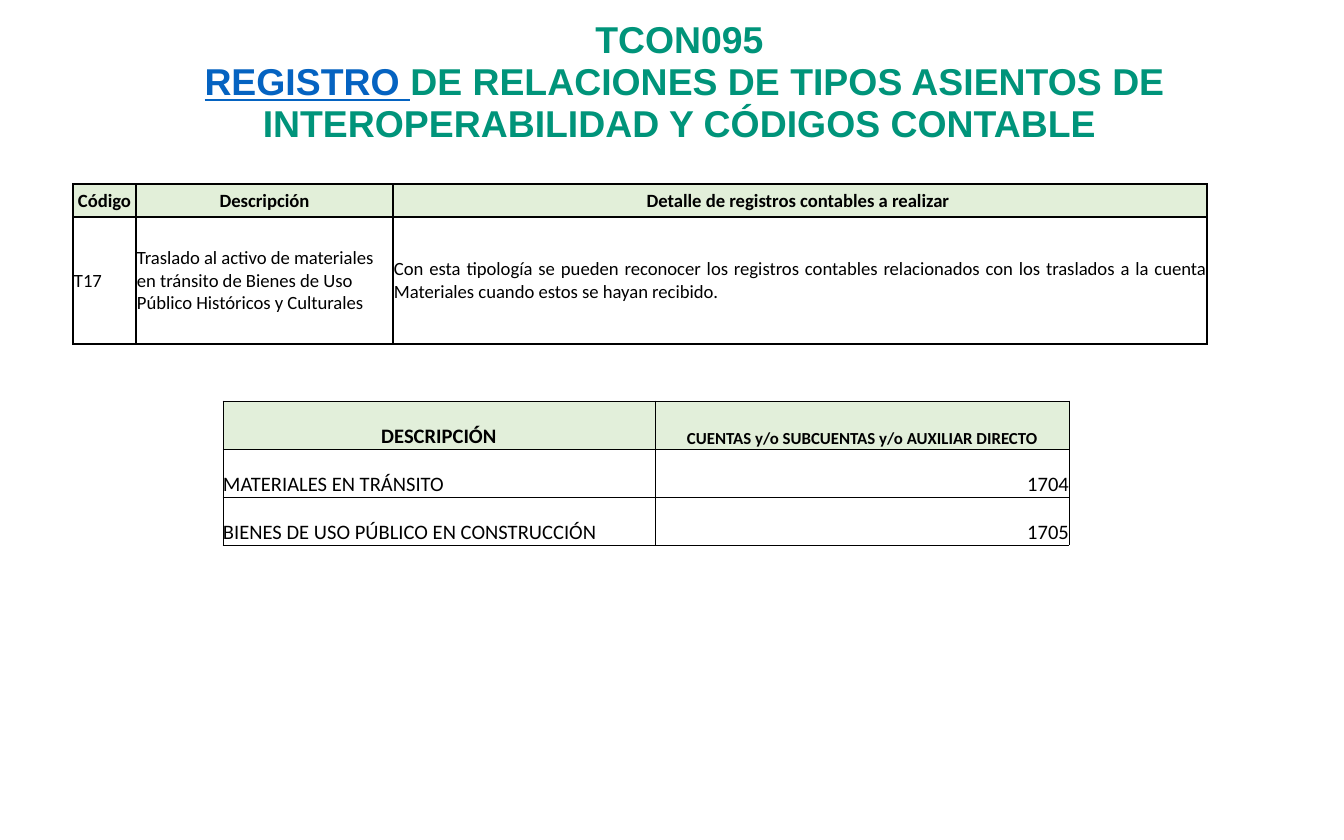
from lxml.etree import SubElement
from pptx import Presentation
from pptx.dml.color import RGBColor
from pptx.enum.text import MSO_ANCHOR as ANCHOR, PP_ALIGN as ALIGN
from pptx.oxml.ns import qn
from pptx.util import Pt

EMU_PER_PX = 914400 / 134.4
COLORS = {
    "title": "00947A",
    "link": "0563C1",
    "text": "000000",
    "border": "000000",
    "type_header": "E2EFD9",
    "account_header": "E2EFDA",
}


def px(n):
    return round(n * EMU_PER_PX)


def rgb(name):
    return RGBColor.from_string(COLORS[name])


def add_text(p, text, size=10, font="Calibri", color="text", bold=False,
             underline=False, align=None):
    if align is not None:
        p.alignment = align
    r = p.add_run()
    r.text = text
    f = r.font
    f.size, f.name, f.bold, f.underline = Pt(size), font, bold, underline
    f.color.rgb = rgb(color)


def set_borders(cell, width):
    tc_pr = cell._tc.get_or_add_tcPr()
    for i, side in enumerate(("lnL", "lnR", "lnT", "lnB")):
        ln = tc_pr.makeelement(qn("a:" + side), {"w": str(Pt(width))})
        fill = SubElement(ln, qn("a:solidFill"))
        SubElement(fill, qn("a:srgbClr"), val=COLORS["border"])
        tc_pr.insert(i, ln)


def add_title(slide, x, y, w, h):
    sp = slide.shapes.title
    sp.left, sp.top, sp.width, sp.height = map(px, (x, y, w, h))
    tf = sp.text_frame
    tf.word_wrap = True
    tf.vertical_anchor = ANCHOR.MIDDLE
    # The deeper bottom inset lifts the three lines
    tf.margin_top, tf.margin_bottom = 0, px(48)
    p = tf.paragraphs[0]
    p.line_spacing = 0.94
    style = dict(size=20, font="Arial", bold=True, align=ALIGN.CENTER)
    add_text(p, "TCON095", color="title", **style)
    p.add_line_break()
    add_text(p, " ", color="title", **style)
    add_text(p, "REGISTRO ", color="link", underline=True, **style)
    add_text(p, "DE RELACIONES DE TIPOS ASIENTOS DE "
                "INTEROPERABILIDAD Y CÓDIGOS CONTABLE", color="title", **style)


def add_grid(slide, x, y, cols, rows, data, header_sizes, header_fill,
             aligns, size, anchor, inset, border):
    """Table with a tinted header row; aligns apply to the body columns."""
    frame = slide.shapes.add_table(len(rows), len(cols), px(x), px(y),
                                   px(sum(cols)), px(sum(rows)))
    table = frame.table
    table.horz_banding = False
    for col, w in zip(table.columns, cols):
        col.width = px(w)
    for row, h in zip(table.rows, rows):
        row.height = px(h)
    for i, values in enumerate(data):
        for j, text in enumerate(values):
            cell = table.cell(i, j)
            cell.vertical_anchor = anchor
            cell.margin_left = cell.margin_right = cell.margin_top = px(inset)
            cell.margin_bottom = 0
            p = cell.text_frame.paragraphs[0]
            if i == 0:
                cell.fill.solid()
                cell.fill.fore_color.rgb = rgb(header_fill)
                add_text(p, text, size=header_sizes[j], bold=True,
                         align=ALIGN.CENTER)
            else:
                cell.fill.background()
                add_text(p, text, size=size, align=aligns[j])
            set_borders(cell, border)


def add_type_table(slide, x, y):
    data = [
        ("Código", "Descripción", "Detalle de registros contables a realizar "),
        ("T17",
         "Traslado al activo de materiales en tránsito de Bienes de Uso "
         "Público Históricos y Culturales",
         "Con esta tipología se pueden reconocer los registros contables "
         "relacionados con los traslados a la cuenta Materiales cuando estos "
         "se hayan recibido."),
    ]
    add_grid(slide, x, y, (63, 257, 814), (33, 127), data,
             header_sizes=(10, 10, 10), header_fill="type_header",
             aligns=(ALIGN.LEFT, ALIGN.LEFT, ALIGN.JUSTIFY), size=10,
             anchor=ANCHOR.MIDDLE, inset=1, border=1)


def add_account_table(slide, x, y):
    data = [
        ("DESCRIPCIÓN", "CUENTAS y/o SUBCUENTAS y/o AUXILIAR DIRECTO"),
        ("MATERIALES EN TRÁNSITO", "1704"),
        ("BIENES DE USO PÚBLICO EN CONSTRUCCIÓN", "1705"),
    ]
    add_grid(slide, x, y, (432, 414), (48,) * 3, data,
             header_sizes=(11, 9), header_fill="account_header",
             aligns=(ALIGN.LEFT, ALIGN.RIGHT), size=11,
             anchor=ANCHOR.BOTTOM, inset=0, border=0.5)


def main():
    prs = Presentation()
    prs.slide_width, prs.slide_height = px(1344), px(840)
    slide = prs.slides.add_slide(prs.slide_layouts[5])
    add_title(slide, 15, 35, 1329, 144)
    add_type_table(slide, 73, 184)
    add_account_table(slide, 223, 401)
    prs.save("out.pptx")


if __name__ == "__main__":
    main()
